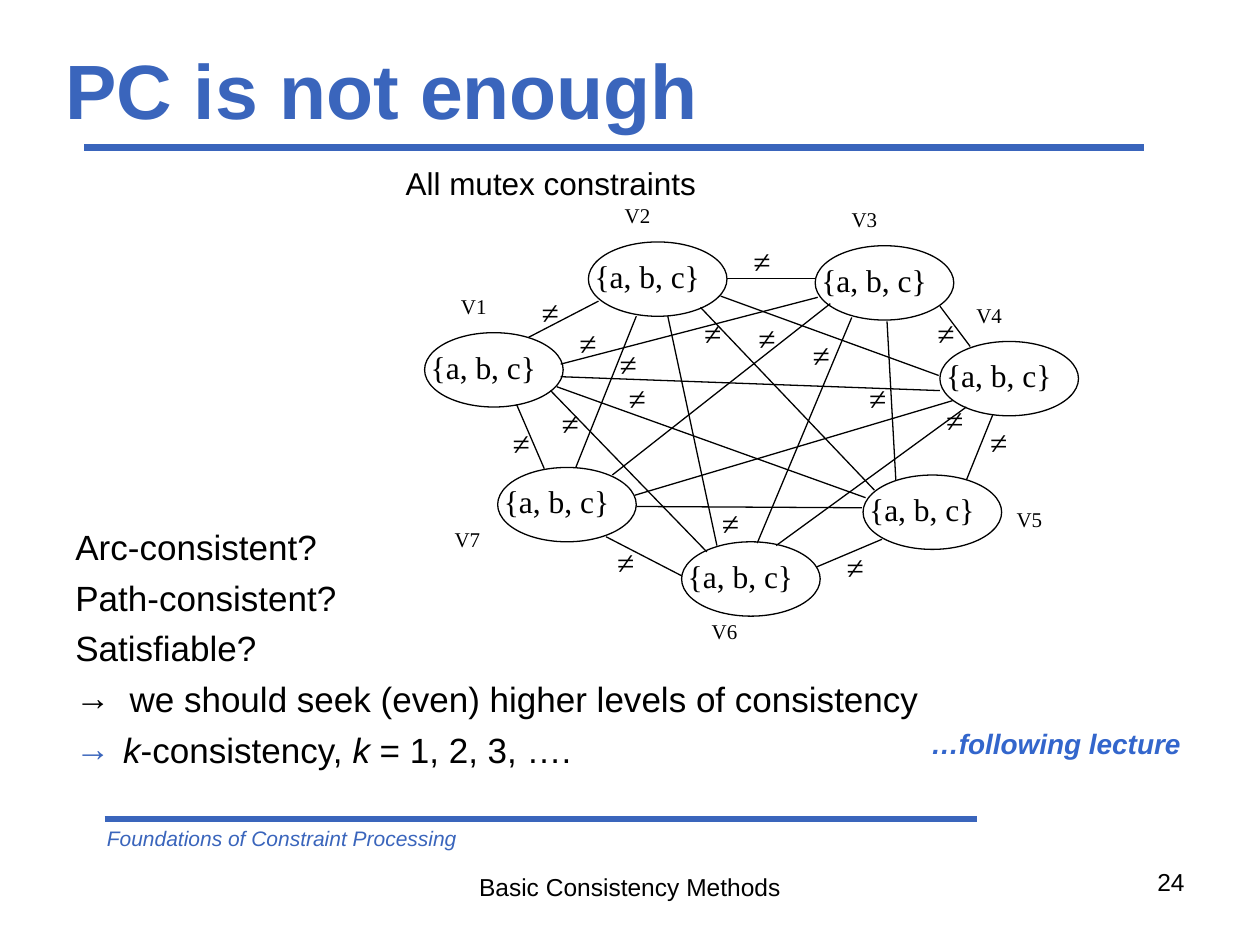
from collections import namedtuple
from dataclasses import dataclass

from lxml.etree import SubElement
from pptx import Presentation
from pptx.dml.color import RGBColor
from pptx.enum.shapes import MSO_CONNECTOR, MSO_SHAPE
from pptx.enum.text import MSO_ANCHOR, PP_ALIGN
from pptx.oxml.ns import qn
from pptx.util import Inches, Pt

Box = namedtuple("Box", "left top width height")
Node = namedtuple("Node", "name left top label_x label_y")


@dataclass(frozen=True)
class Theme:
    accent: str = "3A65BC"
    remark: str = "3366CC"
    ink: str = "000000"
    paper: str = "FFFFFF"
    sans: str = "Arial"
    serif: str = "Times New Roman"
    title_size: int = 44
    body_size: int = 20
    graph_size: int = 18
    remark_size: int = 16
    page_size: int = 14
    label_size: int = 12
    rule_width: float = 4
    edge_width: float = 0.75


THEME = Theme()

NODES = [
    Node("V2", 1.67, 0.92, 0.19, -0.36),
    Node("V3", 3.47, 0.95, 0.19, -0.36),
    Node("V1", 0.37, 1.64, 0.19, -0.36),
    Node("V4", 4.46, 1.71, 0.19, -0.36),
    Node("V7", 0.95, 2.71, -0.44, 0.42),
    Node("V5", 3.85, 2.77, 1.12, 0.2),
    Node("V6", 2.41, 3.3, 0.14, 0.56),
]

EDGES = [
    (2.77, 1.21, 3.47, 1.21), (4.46, 1.43, 4.7, 1.75), (1.19, 1.68, 1.75, 1.39),
    (1.32, 2.72, 1.1, 2.21), (1.81, 3.26, 2.41, 3.57), (3.48, 3.5, 4, 3.28),
    (4.67, 2.81, 4.88, 2.29), (2.05, 1.51, 1.57, 2.71), (2.3, 1.51, 2.69, 3.33),
    (2.56, 1.44, 3.94, 2.89), (2.72, 1.35, 4.45, 1.98), (3.49, 1.36, 1.45, 1.89),
    (3.59, 1.41, 1.86, 2.77), (3.76, 1.52, 3.01, 3.31), (4.04, 1.55, 4.11, 2.81),
    (4.46, 2.1, 1.45, 1.99), (4.56, 2.18, 2.04, 2.93), (4.67, 2.23, 3.16, 3.33),
    (3.84, 3.03, 2.05, 3.02), (3.87, 2.95, 1.42, 2.07), (2.61, 3.38, 1.37, 2.1),
]

MUTEX_MARKS = [
    (1.2, 1.28), (1.5, 1.52), (0.97, 2.32), (1.8, 3.26), (2.88, 0.87), (1.82, 1.69),
    (1.89, 1.96), (1.36, 2.16), (2.49, 1.44), (2.92, 1.48), (3.35, 1.62), (3.8, 1.96),
    (4.41, 2.13), (4.76, 2.31), (3.62, 3.3), (2.63, 2.95), (4.34, 1.44),
]


def add_run(paragraph, text, size=THEME.body_size, font=THEME.sans, color=THEME.ink,
            bold=False, italic=False):
    run = paragraph.add_run()
    run.text = text
    run.font.name = font
    run.font.size = Pt(size)
    run.font.bold = bold
    run.font.italic = italic
    run.font.color.rgb = RGBColor.from_string(color)


def add_text(slide, box, text="", align=PP_ALIGN.LEFT, **run_format):
    frame = slide.shapes.add_textbox(*map(Inches, box)).text_frame
    frame.word_wrap = True
    paragraph = frame.paragraphs[0]
    paragraph.alignment = align
    if text:
        add_run(paragraph, text, **run_format)
    return frame


def add_line(slide, start_x, start_y, end_x, end_y, color, width):
    line = slide.shapes.add_connector(
        MSO_CONNECTOR.STRAIGHT, *map(Inches, (start_x, start_y, end_x, end_y)))
    line.line.color.rgb = RGBColor.from_string(color)
    line.line.width = Pt(width)
    SubElement(line._element.spPr, qn("a:effectLst"))


def set_arrow_bullet(paragraph, indent, color):
    properties = paragraph._p.get_or_add_pPr()
    properties.set("marL", str(Inches(indent)))
    properties.set("indent", str(-Inches(indent)))
    bullet_color = SubElement(properties, qn("a:buClr"))
    SubElement(bullet_color, qn("a:srgbClr"), val=color)
    SubElement(properties, qn("a:buFont"), typeface=THEME.sans)
    SubElement(properties, qn("a:buChar"), char="→")


def place_title(slide, box):
    title = slide.shapes.title
    title.left, title.top, title.width, title.height = map(Inches, box)
    frame = title.text_frame
    frame.word_wrap = True
    frame.vertical_anchor = MSO_ANCHOR.MIDDLE
    paragraph = frame.paragraphs[0]
    paragraph.alignment = PP_ALIGN.LEFT
    add_run(paragraph, "PC is not enough", size=THEME.title_size,
            color=THEME.accent, bold=True)
    rule_y = box.top + 0.84
    add_line(slide, box.left + 0.25, rule_y, box.left + 8.66, rule_y,
             THEME.accent, THEME.rule_width)


def place_node(slide, node, box):
    left, top = box.left + node.left, box.top + node.top
    ellipse = slide.shapes.add_shape(
        MSO_SHAPE.OVAL, *map(Inches, (left, top, 1.1, 0.59)))
    ellipse.shadow.inherit = False
    ellipse.fill.solid()
    ellipse.fill.fore_color.rgb = RGBColor.from_string(THEME.paper)
    ellipse.line.color.rgb = RGBColor.from_string(THEME.ink)
    ellipse.line.width = Pt(THEME.edge_width)
    add_text(slide, Box(left - 0.05, top + 0.07, 1.61, 0.7), "{a, b, c}",
             font=THEME.serif, size=THEME.graph_size)
    add_text(slide, Box(left + node.label_x, top + node.label_y, 0.82, 0.45), node.name,
             font=THEME.serif, size=THEME.label_size)


def place_constraint_graph(slide, box):
    for node in NODES:
        place_node(slide, node, box)
    for start_x, start_y, end_x, end_y in EDGES:
        add_line(slide, box.left + start_x, box.top + start_y,
                 box.left + end_x, box.top + end_y, THEME.ink, THEME.edge_width)
    add_text(slide, Box(box.left + 0.12, box.top + 0.25, 2.91, 0.58),
             "All mutex constraints", size=THEME.graph_size)
    for x, y in MUTEX_MARKS:
        add_text(slide, Box(box.left + x, box.top + y, 0.32, 0.4), "≠",
                 font=THEME.serif, size=THEME.graph_size)


def place_questions(slide, box):
    frame = add_text(slide, box, "Arc-consistent?")
    for question in ("Path-consistent?", "Satisfiable?"):
        add_run(frame.add_paragraph(), question)

    conclusion = frame.add_paragraph()
    set_arrow_bullet(conclusion, 0.43, THEME.ink)
    add_run(conclusion, "we should seek (even) higher levels of consistency")

    generalisation = frame.add_paragraph()
    set_arrow_bullet(generalisation, 0.38, THEME.accent)
    for text, italic in (("k", True), ("-consistency, ", False),
                         ("k", True), (" = 1, 2, 3, ….", False)):
        add_run(generalisation, text, italic=italic)

    for paragraph in frame.paragraphs[1:]:
        paragraph.space_before = Pt(5)

    add_text(slide, Box(box.left + box.width - 2.53, box.top + 1.6, 2.5, 0.38),
             "…following lecture", align=PP_ALIGN.RIGHT, size=THEME.remark_size,
             color=THEME.remark, bold=True, italic=True)


def place_footer(slide, box):
    add_line(slide, box.left + 0.08, box.top, box.left + 7, box.top,
             THEME.accent, THEME.rule_width)
    add_text(slide, Box(box.left, box.top, 5.25, 0.3),
             "Foundations of Constraint Processing", size=THEME.label_size,
             color=THEME.accent, italic=True)
    add_text(slide, Box(box.left + 2.75, box.top + 0.37, 3, 0.34),
             "Basic Consistency Methods", align=PP_ALIGN.CENTER, size=THEME.page_size)
    add_text(slide, Box(box.left + box.width - 2.33, box.top + 0.33, 2.33, 0.52),
             "24", align=PP_ALIGN.RIGHT, size=THEME.page_size)


def main():
    presentation = Presentation()
    presentation.slide_width, presentation.slide_height = Inches(10), Inches(7.5)
    slide = presentation.slides.add_slide(presentation.slide_layouts[5])
    place_title(slide, Box(0.42, 0.33, 9, 0.75))
    place_questions(slide, Box(0.5, 4.12, 9, 2.21))
    place_constraint_graph(slide, Box(3, 1, 6, 4.5))
    place_footer(slide, Box(0.75, 6.5, 8.75, 0.85))
    presentation.save("out.pptx")


if __name__ == "__main__":
    main()
